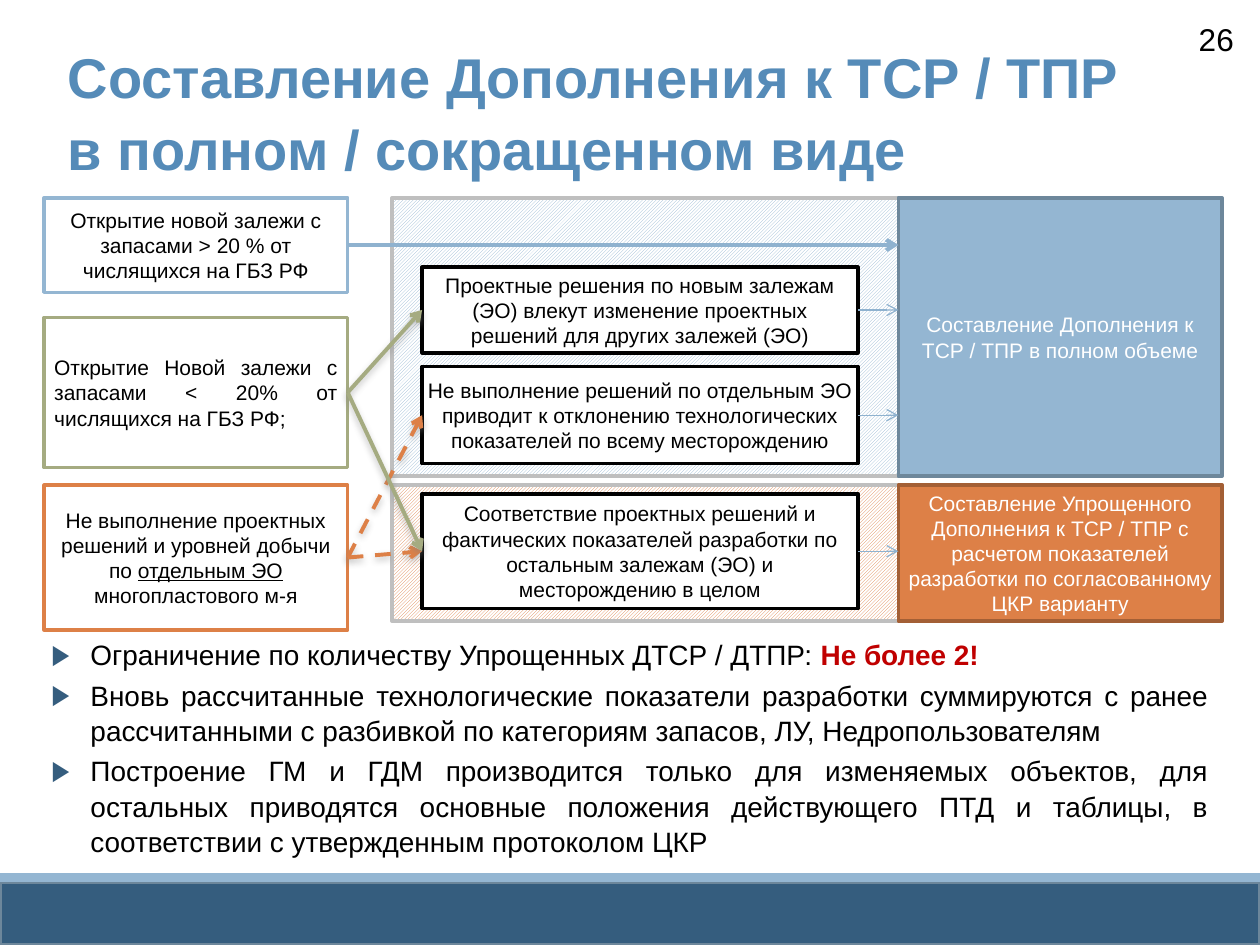
"""Build the slide on preparing full and simplified project supplements."""
import pptx
import pptx.util
import pptx.dml.color
import pptx.enum.dml
import pptx.enum.shapes
import pptx.enum.text
import pptx.oxml
import pptx.oxml.ns

Inches, Pt = pptx.util.Inches, pptx.util.Pt
ALIGN = pptx.enum.text.PP_ALIGN
ANCHOR = pptx.enum.text.MSO_ANCHOR
DASH = pptx.enum.dml.MSO_LINE.DASH

COLORS = {
    "white": "FFFFFF", "black": "000000", "title": "558BB8", "navy": "355D7E",
    "slate": "6D879B", "blue": "94B6D2", "arrow": "8FB2CF", "green": "A5AB81",
    "orange": "DD8047", "brown": "A35F35", "gray": "BFBFBF", "red": "C00000",
    "shadow": "808080",
}
FONT = "Arial"

TITLE = ["Составление Дополнения к ТСР / ТПР ", "в полном / сокращенном виде"]
NUMBER = "26"
NOTES = [
    [("Ограничение по количеству Упрощенных ДТСР / ДТПР: ", {}),
     ("Не более 2!", {"color": "red", "bold": True})],
    [("Вновь рассчитанные технологические показатели разработки суммируются с ранее "
      "рассчитанными с разбивкой по категориям запасов, ЛУ, Недропользователям", {})],
    [("Построение ГМ и ГДМ производится только для изменяемых объектов, для остальных "
      "приводятся основные положения действующего ПТД и таблицы, в соответствии с "
      "утвержденным протоколом ЦКР", {})],
]

COLUMNS = {"cause": (0.35, 2.41), "zone": (3.11, 4.02),
           "condition": (3.35, 3.46), "result": (7.13, 2.57)}
ZONES = [(3.85, 1.08, "orange"), (1.57, 2.21, "blue")]

# name: column, top, height, fill, line, side and top insets, runs
BOXES = {
    "large deposit": ("cause", 1.57, 0.75, "white", "blue", (0.1, 0.05), [
        ("Открытие новой залежи с запасами > 20 % от числящихся на ГБЗ РФ", {})]),
    "small deposit": ("cause", 2.52, 1.19, "white", "green", (0.08, 0), [
        ("Открытие Новой залежи с запасами < 20% от числящихся на ГБЗ РФ;", {})]),
    "missed targets": ("cause", 3.85, 1.15, "white", "orange", (0.1, 0.05), [
        ("Не выполнение проектных решений и уровней добычи по ", {}),
        ("отдельным ЭО ", {"underline": True}),
        ("многопластового м-я", {})]),
    "full": ("result", 1.57, 2.21, "blue", "slate", (0.08, 0.05), [
        ("Составление Дополнения к ТСР / ТПР в полном объеме", {"color": "white"})]),
    "simplified": ("result", 3.85, 1.08, "orange", "brown", (0, 0.05), [
        ("Составление Упрощенного Дополнения к ТСР / ТПР с расчетом показателей "
         "разработки по согласованному ЦКР варианту", {"color": "white"})]),
    "changes others": ("condition", 2.12, 0.68, "white", "black", (0.1, 0.05), [
        ("Проектные решения по новым залежам (ЭО) влекут изменение проектных решений "
         "для других залежей (ЭО)", {})]),
    "deviation": ("condition", 2.91, 0.77, "white", "black", (0, 0), [
        ("Не выполнение решений по отдельным ЭО приводит к отклонению технологических "
         "показателей по всему месторождению", {})]),
    "conformity": ("condition", 3.92, 0.91, "white", "black", (0.1, 0.05), [
        ("Соответствие проектных решений и фактических показателей разработки по "
         "остальным залежам (ЭО) и месторождению в целом", {})]),
}
JUSTIFIED = {"small deposit"}

LEVEL_ARROWS = [("large deposit", 2.25), ("changes others", 0.75),
                ("deviation", 0.75), ("conformity", 0.75)]
BRANCHES = [("missed targets", "deviation", "orange", DASH),
            ("missed targets", "conformity", "orange", DASH),
            ("small deposit", "changes others", "green", None),
            ("small deposit", "conformity", "green", None)]
LEFT_SITE, RIGHT_SITE = 1, 3


def rgb(name):
    return pptx.dml.color.RGBColor.from_string(COLORS[name])


def add_runs(paragraph, runs, size):
    for text, style in runs:
        run = paragraph.add_run()
        run.text = text
        run.font.name, run.font.size = FONT, Pt(size)
        run.font.color.rgb = rgb(style.get("color", "black"))
        run.font.bold = style.get("bold", False)
        run.font.underline = style.get("underline", False)


def add_rect(slide, left, top, width, height, fill, line=None):
    rect = slide.shapes.add_shape(pptx.enum.shapes.MSO_SHAPE.RECTANGLE,
                                  *map(Inches, (left, top, width, height)))
    rect.shadow.inherit = False
    rect.fill.solid()
    rect.fill.fore_color.rgb = rgb(fill)
    if line:
        rect.line.color.rgb, rect.line.width = rgb(line), Pt(2)
    else:
        rect.line.fill.background()
    return rect


def add_text(slide, left, top, width, height):
    frame = slide.shapes.add_textbox(*map(Inches, (left, top, width, height))).text_frame
    frame.word_wrap = True
    return frame


def add_xml(parent, tag, body="", **attributes):
    listed = " ".join(f'{key}="{value}"' for key, value in attributes.items())
    parent.append(pptx.oxml.parse_xml(
        f'<a:{tag} {pptx.oxml.ns.nsdecls("a")} {listed}>{body}</a:{tag}>'))


def add_arrow(slide, start, end, color, width, dash=None, shadow=False):
    arrow = slide.shapes.add_connector(pptx.enum.shapes.MSO_CONNECTOR.STRAIGHT, *start, *end)
    arrow.line.color.rgb, arrow.line.width = rgb(color), Pt(width)
    if dash:
        arrow.line.dash_style = dash
    add_xml(arrow.line._get_or_add_ln(), "tailEnd", type="arrow")
    effect = (f'<a:outerShdw blurRad="{Pt(4)}" dist="{Pt(2)}" dir="5400000" rotWithShape="0">'
              f'<a:srgbClr val="{COLORS["shadow"]}"><a:alpha val="45000"/></a:srgbClr>'
              '</a:outerShdw>') if shadow else ""
    add_xml(arrow._element.spPr, "effectLst", effect)
    return arrow


def add_header(slide):
    paragraph = add_text(slide, 0.44, 0.26, 9, 0.54).paragraphs[0]
    paragraph.line_spacing = 1.06
    for index, line in enumerate(TITLE):
        if index:
            paragraph.add_line_break()
        add_runs(paragraph, [(line, {"color": "title", "bold": True})], 32)
    paragraph = add_text(slide, 8.81, 0.11, 1.08, 0.4).paragraphs[0]
    paragraph.alignment = ALIGN.RIGHT
    add_runs(paragraph, [(NUMBER, {})], 18)


def add_notes(slide):
    frame = add_text(slide, 0.31, 5, 9.38, 1.8)
    for index, runs in enumerate(NOTES):
        paragraph = frame.add_paragraph() if index else frame.paragraphs[0]
        paragraph.alignment = ALIGN.JUSTIFY
        paragraph.line_spacing, paragraph.space_after = 1.05, Pt(3)
        properties = paragraph._p.get_or_add_pPr()
        properties.set("marL", str(Inches(0.31)))
        properties.set("indent", str(-Inches(0.31)))
        add_xml(properties, "buClr", f'<a:srgbClr val="{COLORS["navy"]}"/>')
        add_xml(properties, "buFont", typeface=FONT)
        add_xml(properties, "buChar", char="▶")
        add_runs(paragraph, runs, 16)


def add_diagram(slide):
    zone_left, zone_width = COLUMNS["zone"]
    for top, height, color in ZONES:
        zone = add_rect(slide, zone_left, top, zone_width, height, "white", "gray")
        zone.fill.patterned()
        zone.fill.pattern = pptx.enum.dml.MSO_PATTERN.LIGHT_UPWARD_DIAGONAL
        zone.fill.fore_color.rgb, zone.fill.back_color.rgb = rgb(color), rgb("white")
    boxes = {}
    for name, (column, top, height, fill, line, (side, edge), runs) in BOXES.items():
        left, width = COLUMNS[column]
        boxes[name] = add_rect(slide, left, top, width, height, fill, line)
        frame = boxes[name].text_frame
        frame.word_wrap, frame.vertical_anchor = True, ANCHOR.MIDDLE
        frame.margin_left = frame.margin_right = Inches(side)
        frame.margin_top = frame.margin_bottom = Inches(edge)
        frame.paragraphs[0].alignment = ALIGN.JUSTIFY if name in JUSTIFIED else ALIGN.CENTER
        add_runs(frame.paragraphs[0], runs, 12)
    for source, width in LEVEL_ARROWS:
        box = boxes[source]
        middle = box.top + box.height // 2
        add_arrow(slide, (box.left + box.width, middle), (boxes["full"].left, middle),
                  "arrow", width)
    for source, target, color, dash in BRANCHES:
        arrow = add_arrow(slide, (0, 0), (0, 0), color, 2.25, dash, shadow=True)
        arrow.begin_connect(boxes[source], RIGHT_SITE)
        arrow.end_connect(boxes[target], LEFT_SITE)


def main():
    deck = pptx.Presentation()
    deck.slide_width, deck.slide_height = Inches(10), Inches(7.5)
    slide = deck.slides.add_slide(deck.slide_layouts[6])
    add_rect(slide, 0, 7, 10, 0.5, "navy", "slate")
    add_rect(slide, 0, 6.93, 10, 0.07, "blue")
    add_header(slide)
    add_notes(slide)
    add_diagram(slide)
    deck.save("out.pptx")


if __name__ == "__main__":
    main()
